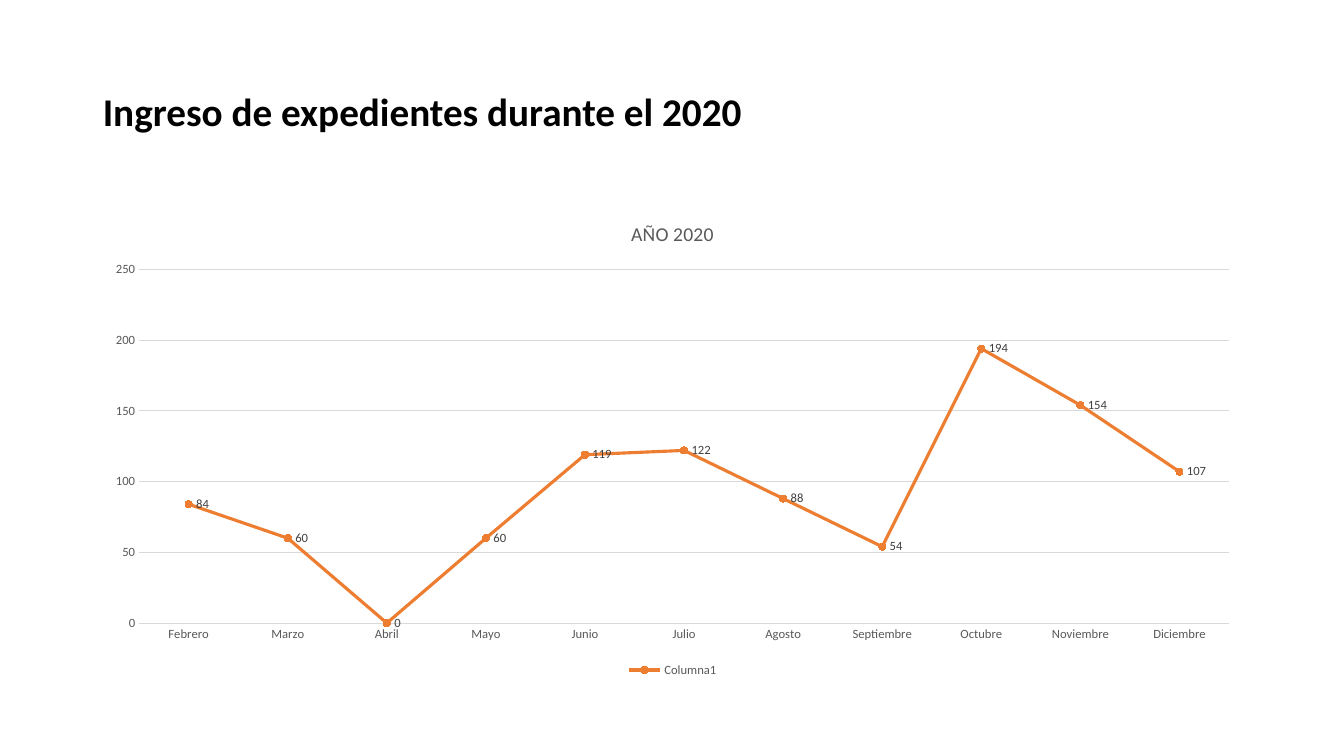
from pptx import Presentation
from pptx.chart.data import CategoryChartData
from pptx.dml.color import RGBColor
from pptx.enum.chart import XL_CHART_TYPE as ChartType
from pptx.enum.chart import XL_LABEL_POSITION as LabelPos
from pptx.enum.chart import XL_LEGEND_POSITION as LegendPos
from pptx.enum.chart import XL_MARKER_STYLE as Marker
from pptx.enum.chart import XL_TICK_MARK as Tick
from pptx.enum.text import MSO_ANCHOR as Anchor
from pptx.enum.text import PP_ALIGN as Align
from pptx.util import Inches, Pt

BLACK = RGBColor(0x00, 0x00, 0x00)
DARK = RGBColor(0x40, 0x40, 0x40)
GRAY = RGBColor(0x59, 0x59, 0x59)
GRID = RGBColor(0xD9, 0xD9, 0xD9)
ORANGE = RGBColor(0xED, 0x7D, 0x31)

INTAKE = {
    "Febrero": 84, "Marzo": 60, "Abril": 0, "Mayo": 60, "Junio": 119,
    "Julio": 122, "Agosto": 88, "Septiembre": 54, "Octubre": 194,
    "Noviembre": 154, "Diciembre": 107,
}


class SlideBuilder:
    font_name = "Calibri"

    def __init__(self, prs):
        self.slide = prs.slides.add_slide(prs.slide_layouts[5])

    def style(self, font, size, color, bold=False):
        font.name = self.font_name
        font.size = Pt(size)
        font.bold = bold
        font.color.rgb = color

    def line(self, line, color, width):
        line.color.rgb = color
        line.width = Pt(width)

    def title(self, text, left, top, width, height):
        sp = self.slide.shapes.title
        sp.left, sp.top = Inches(left), Inches(top)
        sp.width, sp.height = Inches(width), Inches(height)
        tf = sp.text_frame
        tf.text = text
        tf.word_wrap = True
        tf.vertical_anchor = Anchor.MIDDLE
        p = tf.paragraphs[0]
        p.alignment = Align.LEFT
        p.line_spacing = 0.9
        self.style(p.font, 28, BLACK, bold=True)

    def line_chart(self, title, name, values, left, top, width, height):
        data = CategoryChartData()
        data.categories = list(values)
        data.add_series(name, list(values.values()))
        chart = self.slide.shapes.add_chart(
            ChartType.LINE_MARKERS, Inches(left), Inches(top),
            Inches(width), Inches(height), data).chart
        self.style(chart.font, 10, BLACK)
        chart.has_title = True
        tf = chart.chart_title.text_frame
        tf.text = title
        self.style(tf.paragraphs[0].font, 14, GRAY)
        chart.chart_title.include_in_layout = False
        chart.has_legend = True
        chart.legend.position = LegendPos.BOTTOM
        chart.legend.include_in_layout = False
        self.style(chart.legend.font, 9, GRAY)
        self.axes(chart)
        self.series(chart.plots[0])

    def axes(self, chart):
        for axis in (chart.category_axis, chart.value_axis):
            axis.major_tick_mark = axis.minor_tick_mark = Tick.NONE
            self.style(axis.tick_labels.font, 9, GRAY)
        self.line(chart.category_axis.format.line, GRID, 0.75)
        val_axis = chart.value_axis
        val_axis.minimum_scale, val_axis.maximum_scale = 0, 250
        val_axis.major_unit = 50
        val_axis.format.line.fill.background()
        self.line(val_axis.major_gridlines.format.line, GRID, 0.75)

    def series(self, plot):
        plot.vary_by_categories = False
        series = plot.series[0]
        series.smooth = False
        self.line(series.format.line, ORANGE, 2.25)
        marker = series.marker
        marker.style = Marker.CIRCLE
        marker.size = 5
        marker.format.fill.solid()
        marker.format.fill.fore_color.rgb = ORANGE
        self.line(marker.format.line, ORANGE, 0.75)
        labels = series.data_labels
        labels.show_value = True
        labels.position = LabelPos.RIGHT
        self.style(labels.font, 9, DARK)


def main():
    prs = Presentation()
    prs.slide_width, prs.slide_height = Inches(13.33), Inches(7.5)
    s = SlideBuilder(prs)
    s.title("Ingreso de expedientes durante el 2020", 0.92, 0.4, 11.5, 1.45)
    s.line_chart("AÑO 2020", "Columna1", INTAKE, 0.92, 2, 11.5, 4.76)
    prs.save("out.pptx")


if __name__ == "__main__":
    main()
